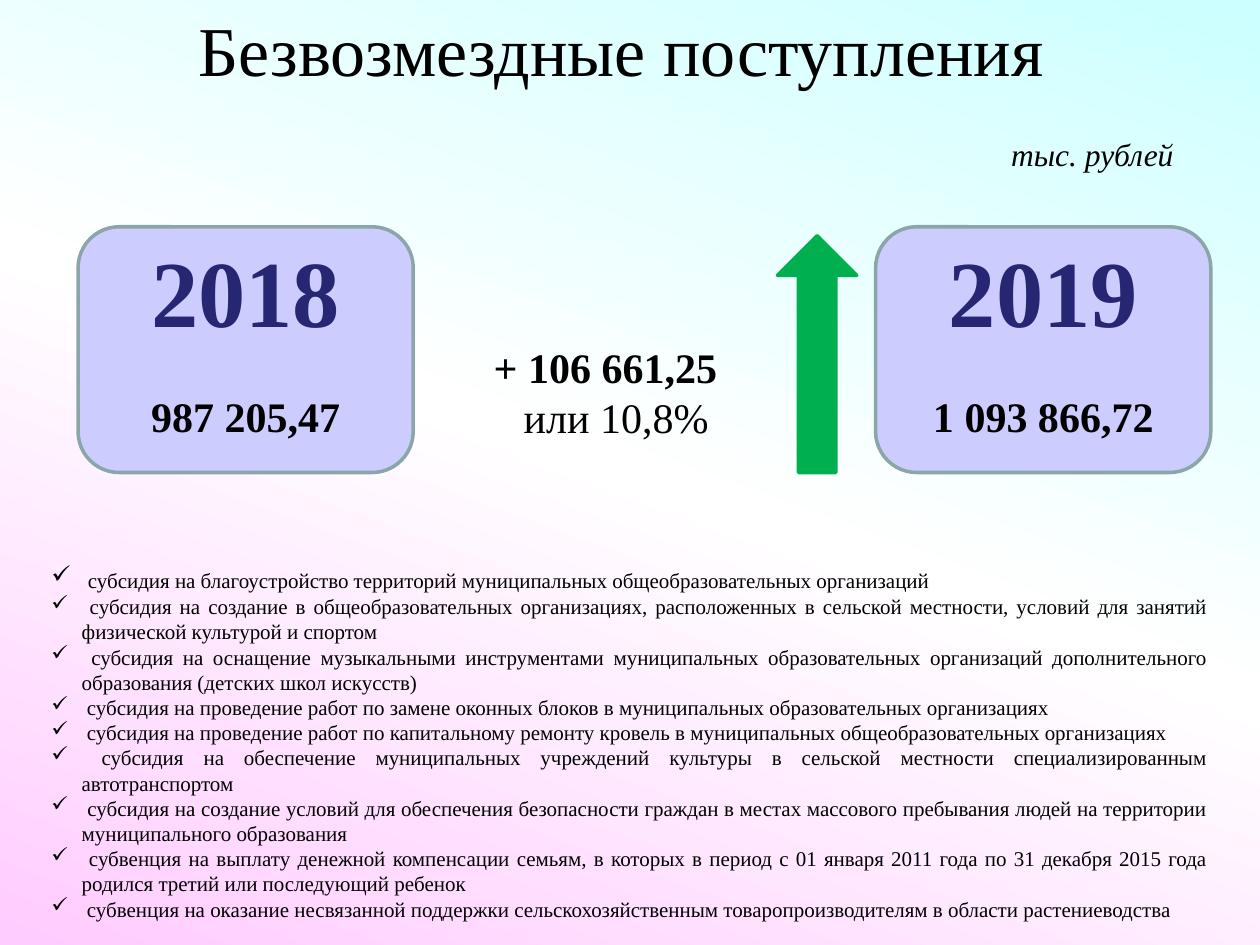
from copy import deepcopy
from dataclasses import dataclass

from lxml.etree import SubElement
from pptx import Presentation
from pptx.dml.color import RGBColor
from pptx.enum.shapes import MSO_SHAPE
from pptx.enum.text import PP_ALIGN
from pptx.oxml.ns import qn
from pptx.util import Inches, Pt


@dataclass(frozen=True)
class Theme:
    font: str = "Times New Roman"
    backdrop: tuple = ((0, "CCFFFF"), (0.5, "FFFFFF"), (1, "FFCCFF"))
    ink: str = "000000"
    card: str = "CCCCFF"
    card_line: str = "8AA6A8"
    year_ink: str = "262673"
    year_outline: str = "6B6BCF"
    growth: str = "00B050"
    title: int = 40
    year: int = 54
    amount: int = 24
    unit: int = 18
    first_mark: int = 14
    item: int = 12


class SlideBuilder:
    def __init__(self, page, theme):
        self.page = page
        self.theme = theme

    def background(self, angle):
        fill = self.page.background.fill
        fill.gradient()
        fill.gradient_angle = 360 - angle
        stops = self.page.element.find(".//" + qn("a:gsLst"))
        stops.append(deepcopy(stops[0]))
        for stop, (position, color) in zip(fill.gradient_stops, self.theme.backdrop):
            stop.position = position
            stop.color.rgb = RGBColor.from_string(color)

    def shape(self, kind, left, top, width, height, fill, line):
        shape = self.page.shapes.add_shape(
            kind, Inches(left), Inches(top), Inches(width), Inches(height))
        shape.shadow.inherit = False
        shape.fill.solid()
        shape.fill.fore_color.rgb = RGBColor.from_string(fill)
        shape.line.color.rgb = RGBColor.from_string(line)
        shape.line.width = Pt(2)
        return shape

    def style(self, para, size, color=None, bold=False, italic=False,
              align=PP_ALIGN.CENTER):
        para.alignment = align
        font = para.font
        font.name, font.size = self.theme.font, Pt(size)
        font.bold, font.italic = bold, italic
        font.color.rgb = RGBColor.from_string(color or self.theme.ink)

    def text_box(self, left, top, width, height):
        box = self.page.shapes.add_textbox(
            Inches(left), Inches(top), Inches(width), Inches(height))
        box.text_frame.word_wrap = True
        return box.text_frame

    def label(self, text, left, top, width, height, size, **look):
        frame = self.text_box(left, top, width, height)
        para = frame.paragraphs[0]
        para.text = text
        self.style(para, size, **look)
        return frame

    def year(self, text, left, top, width, height):
        frame = self.label(text, left, top, width, height, self.theme.year,
                           color=self.theme.year_ink, bold=True)
        frame.word_wrap = False
        span = frame.paragraphs[0].runs[0]
        outline = SubElement(span.font._element, qn("a:ln"), w=str(Pt(1)))
        fill = SubElement(outline, qn("a:solidFill"))
        SubElement(fill, qn("a:srgbClr"), val=self.theme.year_outline)

    def checklist(self, items, left, top, width, height, hang):
        frame = self.text_box(left, top, width, height)
        for index, item in enumerate(items):
            para = frame.add_paragraph() if index else frame.paragraphs[0]
            lead = para.add_run()
            lead.text = " "
            if index == 0:
                lead.font.size = Pt(self.theme.first_mark)
            para.add_run().text = item
            self.style(para, self.theme.item, align=PP_ALIGN.JUSTIFY)
            props = para._p.get_or_add_pPr()
            props.set("marL", str(Inches(hang)))
            props.set("indent", str(-Inches(hang)))
            mark = props.makeelement(qn("a:buChar"), {"char": "✓"})
            props.insert(0, mark)


ITEMS = (
    "субсидия на благоустройство территорий муниципальных общеобразовательных организаций",
    "субсидия на создание в общеобразовательных организациях, расположенных в сельской "
    "местности, условий для занятий физической культурой и спортом",
    "субсидия на оснащение музыкальными инструментами муниципальных образовательных "
    "организаций дополнительного образования (детских школ искусств)",
    "субсидия на проведение работ по замене оконных блоков в муниципальных "
    "образовательных организациях",
    "субсидия на проведение работ по капитальному ремонту кровель в муниципальных "
    "общеобразовательных организациях",
    "субсидия на обеспечение муниципальных учреждений культуры в сельской местности "
    "специализированным автотранспортом",
    "субсидия на создание условий для обеспечения безопасности граждан в местах массового "
    "пребывания людей на территории муниципального образования",
    "субвенция на выплату денежной компенсации семьям, в которых в период с 01 января 2011 "
    "года по 31 декабря 2015 года родился третий или последующий ребенок",
    "субвенция на оказание несвязанной поддержки сельскохозяйственным "
    "товаропроизводителям в области растениеводства",
)
YEARS = (("2018", "987 205,47", 0.62), ("2019", "1 093 866,72", 6.95))


def main():
    deck = Presentation()
    deck.slide_width, deck.slide_height = Inches(10), Inches(7.5)
    theme = Theme()
    slide = SlideBuilder(deck.slides.add_slide(deck.slide_layouts[6]), theme)
    slide.background(110)

    # Title and unit of measure
    slide.label("Безвозмездные поступления ", 0.31, 0, 9.38, 0.77, theme.title)
    slide.label("тыс. рублей", 7.73, 1.02, 1.88, 0.4, theme.unit, italic=True)

    # Year cards
    for year, amount, left in YEARS:
        slide.shape(MSO_SHAPE.ROUNDED_RECTANGLE, left, 1.8, 2.66, 1.95,
                    theme.card, theme.card_line)
        slide.year(year, left + 0.47, 1.8, 1.72, 1.01)
        slide.label(amount, left, 3.05, 2.66, 0.5, theme.amount, bold=True)

    # Growth between the years
    change = slide.label("+ 106 661,25", 3.67, 2.66, 2.27, 0.91, theme.amount, bold=True)
    share = change.add_paragraph()
    share.text = "или 10,8%"
    slide.style(share, theme.amount)
    share._p.get_or_add_pPr().set("marL", str(Inches(0.17)))
    arrow = slide.shape(MSO_SHAPE.DOWN_ARROW, 6.17, 1.87, 0.63, 1.88,
                        theme.growth, theme.growth)
    arrow.rotation = 180
    arrow.adjustments[0] = 0.47

    # Subsidies and subventions
    slide.checklist(ITEMS, 0.31, 4.43, 9.38, 2.92, hang=0.24)

    deck.save("out.pptx")


if __name__ == "__main__":
    main()
